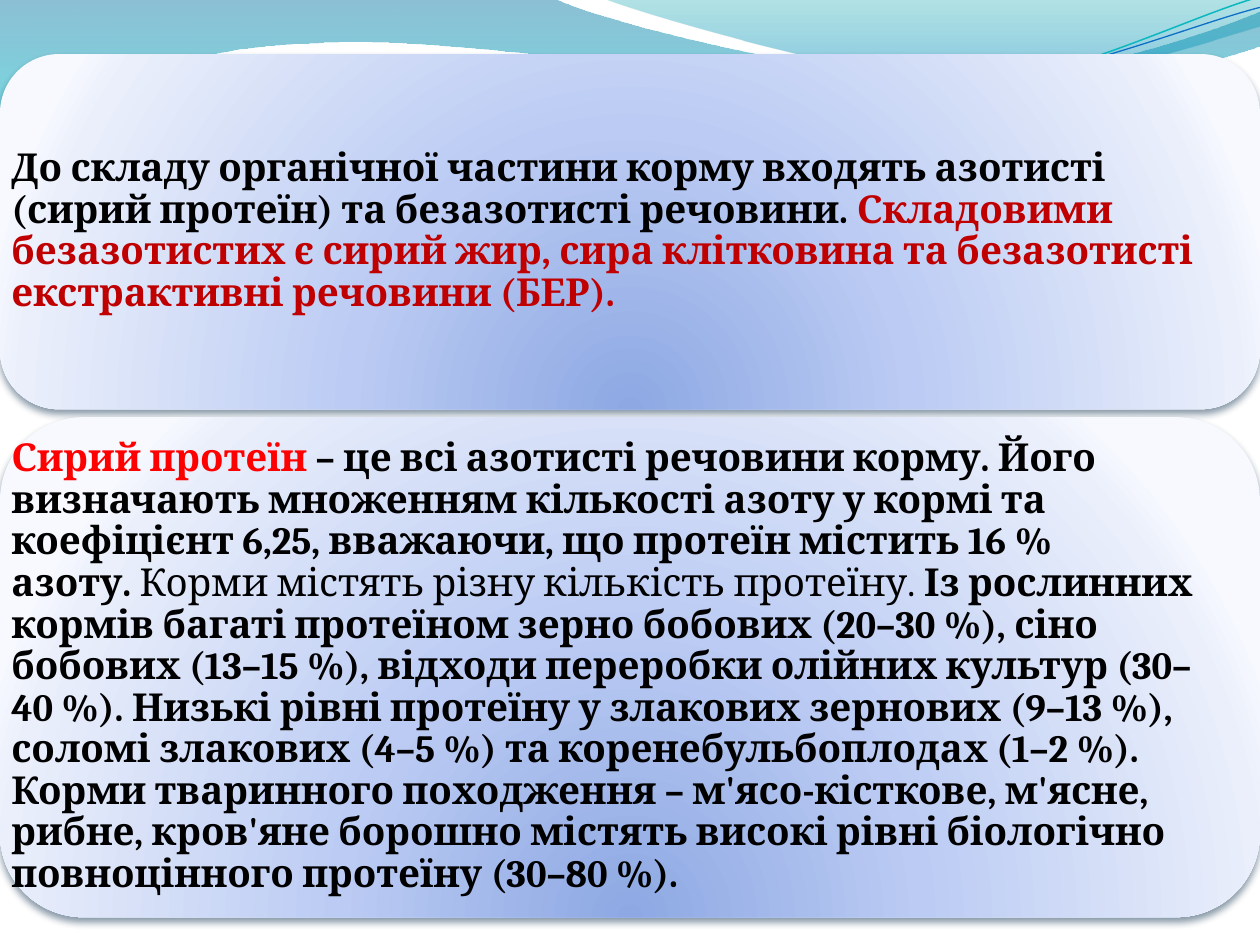
from lxml import etree
from pptx import Presentation
from pptx.dml.color import RGBColor
from pptx.enum.shapes import MSO_SHAPE
from pptx.enum.text import MSO_ANCHOR
from pptx.oxml.ns import qn
from pptx.util import Cm, Pt

ROUNDED = MSO_SHAPE.ROUNDED_RECTANGLE
MIDDLE = MSO_ANCHOR.MIDDLE
BLANK_LAYOUT = 6
SLIDE_W, SLIDE_H = 25.4, 19.05
HARD_SPACE = chr(160)
BLACK, DARK_RED, RED = "000000", "C00000", "FF0000"

WAVES = [
    ((0, 0),
     [(11.18, -0.03), (12.09, 0.43, 16.87, 1.6, 19.25, 1.6),
      (21.67, 1.6, 24.33, 0.66, 25.4, 0.23), (25.43, 0.91),
      (24.97, 1.12, 22.1, 1.93, 18.95, 1.9), (15.8, 1.9, 9.7, 0.71, 6.53, 0.86),
      (3.28, 0.91, 1.17, 2.11, -0.03, 2.87)],
     [(0, "0074A1", 45), (100, "00C6CF", 55)]),
    ((12.17, -0.03),
     [(12.93, 0.28, 17.32, 1.57, 19.53, 1.65),
      (21.74, 1.75, 24.41, 0.81, 25.4, 0.53), (25.4, 0)],
     [(0, "00A1A9", 30), (80, "008BBF", 45)]),
]
STRANDS = [
    ((0, 2.82),
     [(1.22, 2.36, 4.01, 1.45, 7.04, 1.32), (10.03, 1.19, 15.06, 2.26, 18.11, 2.03),
      (21.16, 1.8, 23.83, 0.38, 25.35, -0.05)],
     "0AB8BF", 0.85),
    ((0, 2.64),
     [(1.19, 2.44, 4.17, 1.55, 7.19, 1.42), (10.24, 1.3, 15.16, 2.13, 18.21, 1.91),
      (21.23, 1.7, 23.9, 0.53, 25.4, 0.15)],
     "0F6FC6", 0.75),
]
CARD_STOPS = [(0, "8DA8E3", 100), (43, "BBCBF3", 100), (93, "EAEFFB", 100), (100, "F7F9FF", 100)]
CARDS = [
    (1.09, 7.16, [
        ("До складу органічної частини корму входять азотисті (сирий протеїн) "
         "та безазотисті речовини. ", BLACK, True),
        ("Складовими безазотистих є сирий жир, сира клітковина та безазотисті "
         "екстрактивні речовини (БЕР).", DARK_RED, True),
    ]),
    (8.41, 10.08, [
        ("Сирий протеїн ", RED, True),
        ("– це всі азотисті речовини корму.~Його визначають множенням кількості азоту "
         "у кормі та коефіцієнт 6,25, вважаючи, що протеїн містить 16~% азоту.~", BLACK, True),
        ("Корми містять різну кількість протеїну.~", BLACK, False),
        ("Із рослинних кормів багаті протеїном зерно бобових (20–30~%), сіно бобових "
         "(13–15~%), відходи переробки олійних культур (30–40~%). Низькі рівні протеїну "
         "у злакових зернових (9–13~%), соломі злакових (4–5~%) та коренебульбоплодах "
         "(1–2~%). Корми тваринного походження – м'ясо-кісткове, м'ясне, рибне, кров'яне "
         "борошно містять високі рівні біологічно повноцінного протеїну (30–80~%).",
         BLACK, True),
    ]),
]


def rgb(hex_colour):
    """Turn a hex string into a colour."""
    return RGBColor.from_string(hex_colour)


def add_child(parent, tag, **attributes):
    """Append a DrawingML element with the given attributes."""
    return etree.SubElement(parent, qn(f"a:{tag}"), {k: str(v) for k, v in attributes.items()})


def add_colour(parent, colour, opacity):
    """Append a colour with its opacity in percent."""
    add_child(add_child(parent, "srgbClr", val=colour), "alpha", val=opacity * 1000)


def fill_gradient(shape, stops, radial=False):
    """Fill a shape top to bottom, or in circles from below its bottom edge."""
    shape.fill.solid()
    solid = shape._element.spPr.find(qn("a:solidFill"))
    gradient = etree.Element(qn("a:gradFill"), rotWithShape="1")
    stop_list = add_child(gradient, "gsLst")
    for position, colour, opacity in stops:
        add_colour(add_child(stop_list, "gs", pos=position * 1000), colour, opacity)
    if radial:
        circle = add_child(gradient, "path", path="circle")
        add_child(circle, "fillToRect", l=50000, t=130000, r=50000, b=-30000)
    else:
        add_child(gradient, "lin", ang=5400000, scaled=1)
    solid.getparent().replace(solid, gradient)


def bend(outline, segments):
    """Join the three lines of each cubic segment into one curve."""
    lines = iter(list(outline._element.iter(qn("a:lnTo"))))
    for segment in segments:
        start_line = next(lines)
        if len(segment) == 2:
            continue
        curve = etree.Element(qn("a:cubicBezTo"))
        start_line.addprevious(curve)
        for line in (start_line, next(lines), next(lines)):
            curve.append(line[0])
            line.getparent().remove(line)


def add_outline(slide, left, top, start, segments, close):
    """Draw a curved outline relative to the given corner."""
    points = [start]
    for segment in segments:
        points.extend(zip(segment[::2], segment[1::2]))
    first, *rest = [(Cm(left + x), Cm(top + y)) for x, y in points]
    builder = slide.shapes.build_freeform(*first)
    builder.add_line_segments(rest, close=close)
    outline = builder.convert_to_shape()
    bend(outline, segments)
    outline.shadow.inherit = False
    return outline


def add_wave_header(slide, left, top):
    """Draw the translucent waves and the thin strands over them."""
    for start, segments, stops in WAVES:
        wave = add_outline(slide, left, top, start, segments, True)
        fill_gradient(wave, stops)
        wave.line.fill.background()
    for start, segments, colour, width in STRANDS:
        strand = add_outline(slide, left, top, start, segments, False)
        strand.fill.background()
        strand.line.color.rgb = rgb(colour)
        strand.line.width = Pt(width)


def add_card(slide, left, top, width, height, passages):
    """Draw a rounded card with its paragraph, where ~ marks a hard space."""
    box = Cm(left), Cm(top), Cm(width), Cm(height)
    card = slide.shapes.add_shape(ROUNDED, *box)
    fill_gradient(card, CARD_STOPS, radial=True)
    card.line.fill.background()
    card.shadow.inherit = False
    effects = card._element.spPr.find(qn("a:effectLst"))
    shadow = add_child(effects, "outerShdw", blurRad=Pt(4.5), dist=Pt(3), dir=5400000, rotWithShape=0)
    add_colour(shadow, "042747", 48)

    frame = slide.shapes.add_textbox(*box).text_frame
    frame.word_wrap = True
    frame.vertical_anchor = MIDDLE
    frame.margin_left = frame.margin_right = frame.margin_top = frame.margin_bottom = Cm(0.23)
    paragraph = frame.paragraphs[0]
    paragraph.line_spacing = 0.9
    paragraph.space_after = Pt(7.7)
    for wording, colour, bold in passages:
        run = paragraph.add_run()
        run.text = wording.replace("~", HARD_SPACE)
        run.font.name = "Cambria"
        run.font.size = Pt(22)
        run.font.bold = bold
        run.font.color.rgb = rgb(colour)


def main():
    """Build the slide and save it."""
    deck = Presentation()
    deck.slide_width, deck.slide_height = Cm(SLIDE_W), Cm(SLIDE_H)
    slide = deck.slides.add_slide(deck.slide_layouts[BLANK_LAYOUT])
    add_wave_header(slide, 0, 0)
    for top, height, passages in CARDS:
        add_card(slide, 0, top, SLIDE_W, height, passages)
    deck.save("out.pptx")


if __name__ == "__main__":
    main()
